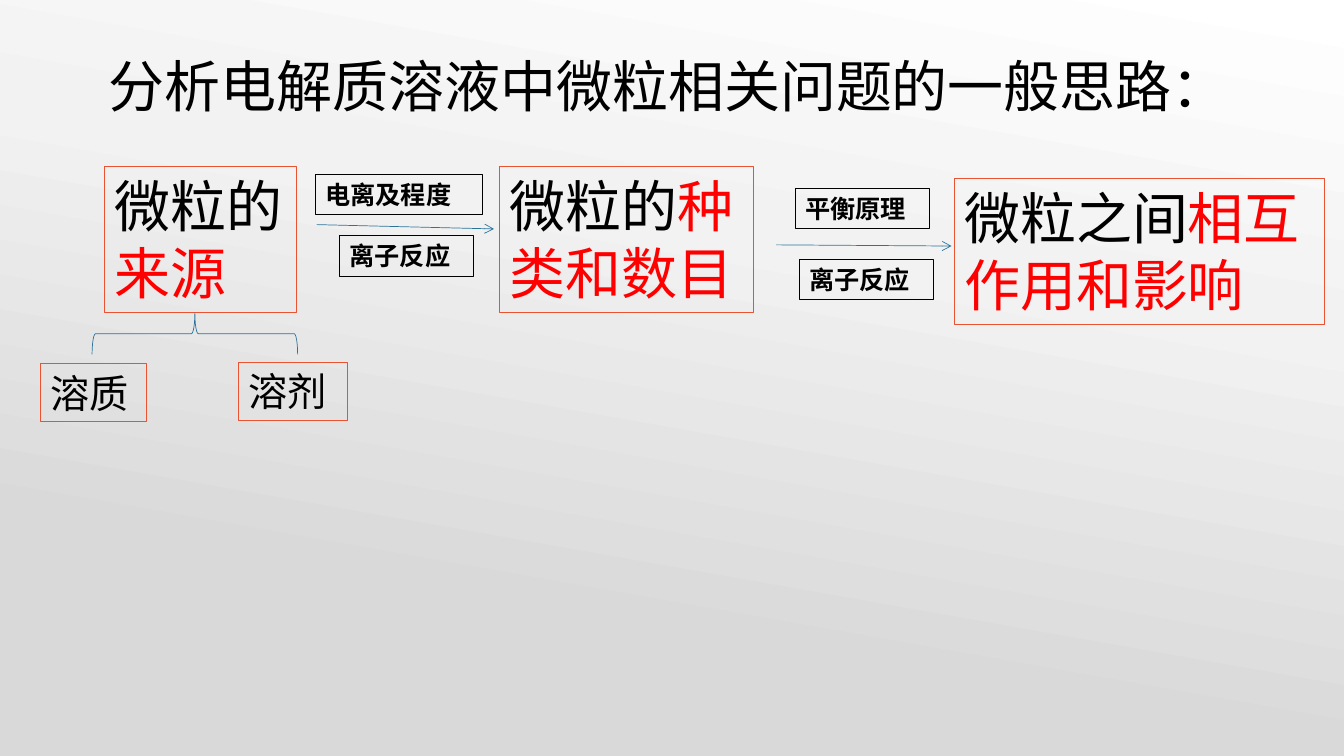
from copy import deepcopy

from lxml import etree
from pptx import Presentation
from pptx import util as u
from pptx.dml.color import RGBColor
from pptx.enum import shapes, text
from pptx.oxml import ns

BLACK, RED, ORANGE, BLUE = "000000", "FF0000", "E95332", "2B7499"
BACKGROUND_STOPS = [(0, "FFFFFF"), (0.34, "F2F2F2"), (0.76, "D9D9D9")]

STAGES = [
    (2.64, 4.19, 4.83, "微粒的", "来源"),
    (12.6, 4.19, 6.38, "微粒的", "种类和数目"),
    (24.05, 4.5, 9.32, "微粒之间", "相互作用和影响"),
]
SOURCES = [(1.02, 9.17, 2.67, "溶质"), (6.02, 9.14, 2.74, "溶剂")]
CONDITIONS = [
    (7.95, 4.39, 4.22, "电离及程度"),
    (8.56, 5.94, 3.38, "离子反应"),
    (20.04, 4.75, 3.38, "平衡原理"),
    (20.14, 6.53, 3.38, "离子反应"),
]
ARROWS = [(7.98, 5.66, 12.45, 5.77), (19.56, 6.17, 23.98, 6.2)]


def rgb(value):
    """Return the colour for a hex string."""
    return RGBColor.from_string(value)


def apply(target, values):
    """Set every attribute in values on target."""
    for name, value in values.items():
        setattr(target, name, value)


def paint_background(slide):
    """Fill the slide background with the grey gradient."""
    fill = slide.background.fill
    fill.gradient()
    fill.gradient_angle = 260
    stop_list = fill.gradient_stops[0]._gs.getparent()
    stop_list.append(deepcopy(stop_list[-1]))
    for stop, (position, colour) in zip(fill.gradient_stops, BACKGROUND_STOPS):
        stop.position = position
        stop.color.rgb = rgb(colour)


def write(shape, parts, size, bold=False):
    """Write coloured runs into a shape, left and top aligned."""
    apply(shape.text_frame, {
        "word_wrap": True,
        "auto_size": text.MSO_AUTO_SIZE.NONE,
        "vertical_anchor": text.MSO_ANCHOR.TOP,
    })
    paragraph = shape.text_frame.paragraphs[0]
    paragraph.alignment = text.PP_ALIGN.LEFT
    for words, colour in parts:
        run = paragraph.add_run()
        run.text = words
        apply(run.font, {"name": "Arial", "size": u.Pt(size), "bold": bold})
        run.font.color.rgb = rgb(colour)


def outline(shape, colour, width):
    """Give a shape or connector a plain line."""
    shape.line.color.rgb = rgb(colour)
    shape.line.width = u.Pt(width)


def add_outlined(slide, kind, place, colour, width):
    """Add an unfilled preset shape with a coloured outline."""
    shape = slide.shapes.add_shape(kind, *map(u.Cm, place))
    shape.shadow.inherit = False
    shape.fill.background()
    outline(shape, colour, width)
    return shape


def add_box(slide, place, colour, parts, size, bold=False):
    """Add a framed text box."""
    box = add_outlined(slide, shapes.MSO_SHAPE.RECTANGLE, place, colour, 0.75)
    write(box, parts, size, bold)


def add_arrow(slide, ends):
    """Add a thin arrow between two points."""
    arrow = slide.shapes.add_connector(
        shapes.MSO_CONNECTOR.STRAIGHT, *map(u.Cm, ends))
    outline(arrow, BLUE, 0.5)
    etree.SubElement(arrow.line._get_or_add_ln(), ns.qn("a:tailEnd"), type="arrow")
    etree.SubElement(arrow._element.spPr, ns.qn("a:effectLst"))


def add_title(slide, words):
    """Place and format the title."""
    title = slide.shapes.title
    apply(title, {"left": u.Cm(2.49), "top": u.Cm(1.17),
                  "width": u.Cm(29.49), "height": u.Cm(1.96)})
    write(title, [(words, BLACK)], 40)


def main():
    """Build the slide and save it."""
    deck = Presentation()
    apply(deck, {"slide_width": u.Cm(33.87), "slide_height": u.Cm(19.05)})
    slide = deck.slides.add_slide(deck.slide_layouts[5])
    paint_background(slide)
    add_title(slide, "分析电解质溶液中微粒相关问题的一般思路：")
    for left, top, width, topic, focus in STAGES:
        add_box(slide, (left, top, width, 3.68), ORANGE,
                [(topic, BLACK), (focus, RED)], 40)
    brace = add_outlined(slide, shapes.MSO_SHAPE.LEFT_BRACE,
                         (4.39, 5.82, 1.04, 5.18), BLUE, 0.5)
    brace.rotation = 90
    for left, top, width, source in SOURCES:
        add_box(slide, (left, top, width, 1.45), ORANGE, [(source, BLACK)], 28)
    for left, top, width, condition in CONDITIONS:
        add_box(slide, (left, top, width, 1.02), BLACK,
                [(condition, BLACK)], 18, True)
    for ends in ARROWS:
        add_arrow(slide, ends)
    deck.save("out.pptx")


if __name__ == "__main__":
    main()
